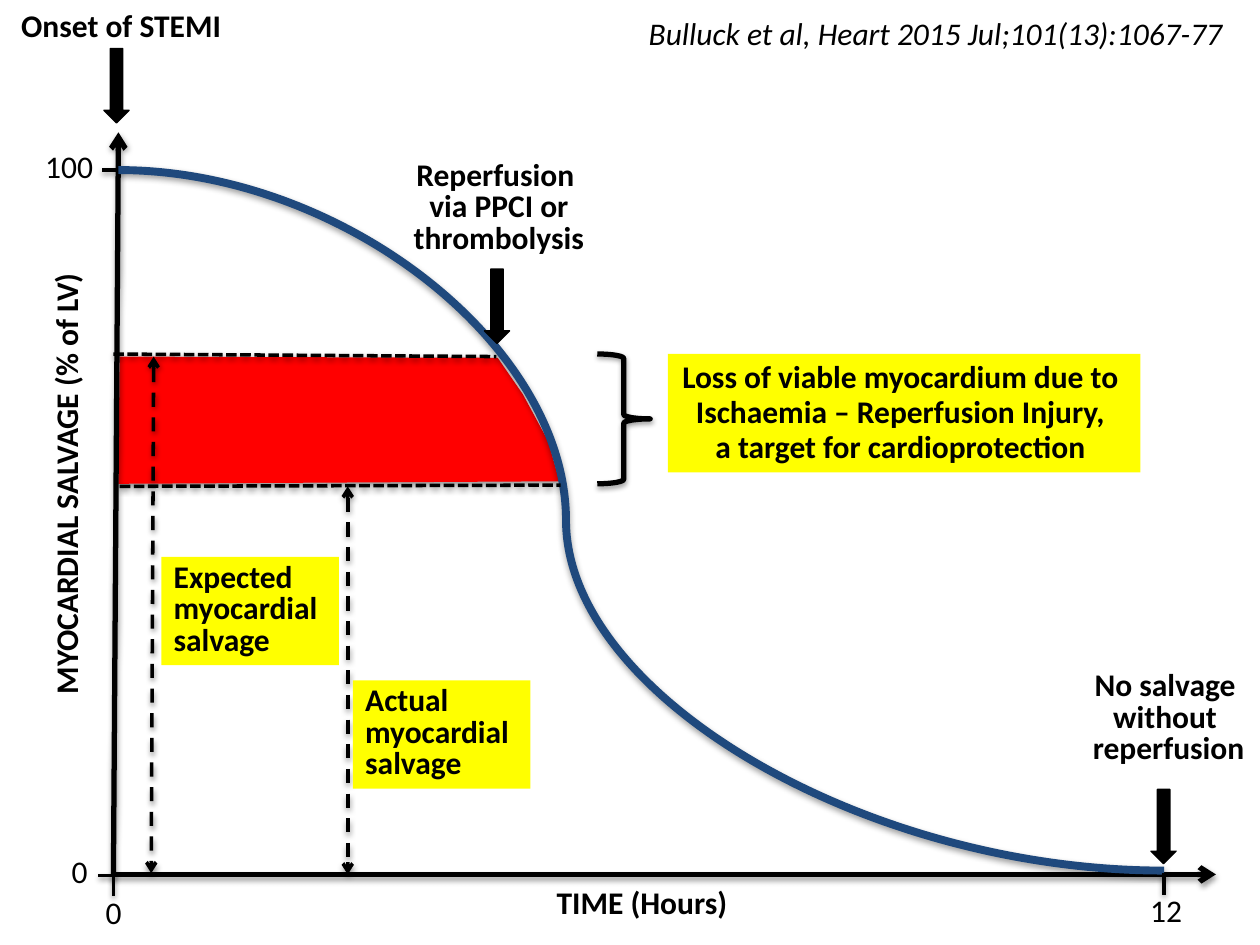
import pptx
import pptx.util
import pptx.dml.color
import pptx.enum.dml
import pptx.enum.shapes
import pptx.enum.text
import pptx.oxml
import pptx.oxml.ns

PX = 9144  # 100 px to the inch
BLACK, YELLOW, RED, NAVY = "000000", "FFFF00", "FF0000", "1F497D"
SHAPE = pptx.enum.shapes.MSO_SHAPE
STRAIGHT = pptx.enum.shapes.MSO_CONNECTOR.STRAIGHT
CURVE = pptx.enum.shapes.MSO_CONNECTOR.CURVE
DASH = pptx.enum.dml.MSO_LINE.DASH
SHORT_DASH = pptx.enum.dml.MSO_LINE.SQUARE_DOT
LEFT = pptx.enum.text.PP_ALIGN.LEFT
CENTER = pptx.enum.text.PP_ALIGN.CENTER
SHADOW = (
    '<a:effectLst %s><a:outerShdw blurRad="40000" dist="20000" dir="5400000" rotWithShape="0">'
    '<a:srgbClr val="000000"><a:alpha val="38000"/></a:srgbClr></a:outerShdw></a:effectLst>'
    % pptx.oxml.ns.nsdecls("a")
)


def rgb(color):
    return pptx.dml.color.RGBColor.from_string(color)


def add_shadow(sp):
    """Call after the line is set: effects follow it in spPr."""
    sp._element.spPr.append(pptx.oxml.parse_xml(SHADOW))


prs = pptx.Presentation()
prs.slide_width, prs.slide_height = 1000 * PX, 750 * PX
s = prs.slides.add_slide(prs.slide_layouts[6])

# Area between expected and actual salvage
fb = s.shapes.build_freeform(95, 283, scale=PX)
fb.add_line_segments([(395, 284), (415, 313), (435, 350), (444, 382), (94, 384)])
sp = fb.convert_to_shape()
sp.fill.solid()
sp.fill.fore_color.rgb = rgb(RED)
sp.line.fill.background()
add_shadow(sp)

# Axes, curve, levels, spans and ticks: kind, x1, y1, x2, y2, colour, width, dash, arrow ends
lines = [
    (STRAIGHT, 90, 696, 94, 105, BLACK, 3, None, ["tailEnd"]),
    (STRAIGHT, 90, 694, 965, 694, BLACK, 3, None, ["tailEnd"]),
    (CURVE, 94, 135, 924, 691, NAVY, 4.5, None, []),
    (STRAIGHT, 90, 281, 394, 283, BLACK, 2, SHORT_DASH, []),
    (STRAIGHT, 95, 386, 445, 385, BLACK, 2, SHORT_DASH, []),
    (STRAIGHT, 122, 283, 120, 693, BLACK, 2, DASH, ["headEnd", "tailEnd"]),
    (STRAIGHT, 276, 386, 276, 694, BLACK, 2, DASH, ["headEnd", "tailEnd"]),
    (STRAIGHT, 92, 135, 81, 135, BLACK, 2, None, []),
    (STRAIGHT, 89, 695, 78, 695, BLACK, 2, None, []),
    (STRAIGHT, 90, 694, 90, 711, BLACK, 2, None, []),
    (STRAIGHT, 924, 693, 924, 710, BLACK, 2, None, []),
]
for kind, x1, y1, x2, y2, color, width, dash, ends in lines:
    sp = s.shapes.add_connector(kind, x1 * PX, y1 * PX, x2 * PX, y2 * PX)
    sp.line.color.rgb = rgb(color)
    sp.line.width = pptx.util.Pt(width)
    if dash:
        sp.line.dash_style = dash
    for end in ends:
        ln = sp.line._get_or_add_ln()
        ln.append(pptx.oxml.parse_xml('<a:%s %s type="arrow"/>' % (end, pptx.oxml.ns.nsdecls("a"))))
    if kind == CURVE:
        guide = '<a:gd %s name="adj1" fmla="val 42800"/>' % pptx.oxml.ns.nsdecls("a")
        geom = sp._element.spPr.find(pptx.oxml.ns.qn("a:prstGeom"))
        geom.find(pptx.oxml.ns.qn("a:avLst")).append(pptx.oxml.parse_xml(guide))
    add_shadow(sp)

# Event arrows pointing down
for x, y in [(63, 58), (365, 233), (894, 646)]:
    sp = s.shapes.add_shape(SHAPE.LEFT_ARROW, x * PX, y * PX, 59 * PX, 20 * PX)
    sp.rotation = 270
    sp.shadow.inherit = False
    sp.fill.solid()
    sp.fill.fore_color.rgb = rgb(BLACK)
    sp.line.color.rgb = rgb(BLACK)
    sp.line.width = pptx.util.Pt(0.75)

# Brace beside the lost myocardium
sp = s.shapes.add_shape(SHAPE.RIGHT_BRACE, 474 * PX, 281 * PX, 42 * PX, 103 * PX)
sp.fill.background()
sp.line.color.rgb = rgb(BLACK)
sp.line.width = pptx.util.Pt(3)
add_shadow(sp)

# Labels: x, y, w, h, lines, style, alignment, line spacing, fill, rotation
labels = [
    (128, 442, 141, 86, ["Expected", "myocardial", "salvage"], "b", LEFT, 18, YELLOW, 0),
    (280, 540, 141, 86, ["Actual", "myocardial", "salvage"], "b", LEFT, 18, YELLOW, 0),
    (318, 123, 156, 86, ["Reperfusion ", "via PPCI or", "thrombolysis"], "b", CENTER, 18, None, 0),
    (7, 0, 180, 40, ["Onset of STEMI"], "b", LEFT, None, None, 0),
    (-127, 362, 358, 40, ["MYOCARDIAL SALVAGE (% of LV)"], "b", LEFT, None, None, 270),
    (26, 112, 59, 40, ["100"], "", LEFT, None, None, 0),
    (47, 671, 33, 40, ["0"], "", LEFT, None, None, 0),
    (432, 696, 157, 40, ["TIME (Hours)"], "b", LEFT, None, None, 0),
    (74, 704, 33, 40, ["0"], "", LEFT, None, None, 0),
    (903, 702, 46, 40, ["12"], "", LEFT, None, None, 0),
    (857, 528, 141, 86, ["No salvage ", "without ", "reperfusion"], "b", CENTER, 18, None, 0),
    (530, 281, 375, 94, ["Loss of viable myocardium due to ", "Ischaemia – Reperfusion Injury, ",
                         "a target for cardioprotection "], "b", CENTER, 20, YELLOW, 0),
    (505, 6, 493, 40, ["Bulluck et al, Heart 2015 Jul;101(13):1067-77"], "i", LEFT, None, None, 0),
]
for x, y, w, h, texts, style, align, spacing, fill, rotation in labels:
    sp = s.shapes.add_textbox(x * PX, y * PX, w * PX, h * PX)
    sp.rotation = rotation
    if fill:
        sp.fill.solid()
        sp.fill.fore_color.rgb = rgb(fill)
    tf = sp.text_frame
    tf.word_wrap = False
    tf.auto_size = pptx.enum.text.MSO_AUTO_SIZE.SHAPE_TO_FIT_TEXT
    for i, text in enumerate(texts):
        p = tf.add_paragraph() if i else tf.paragraphs[0]
        p.alignment = align
        if spacing:
            p.line_spacing = pptx.util.Pt(spacing)
        r = p.add_run()
        r.text = text
        r.font.name = "Calibri"
        r.font.size = pptx.util.Pt(18)
        r.font.bold = style == "b"
        r.font.italic = style == "i"
        r.font.color.rgb = rgb(BLACK)

prs.save("out.pptx")
